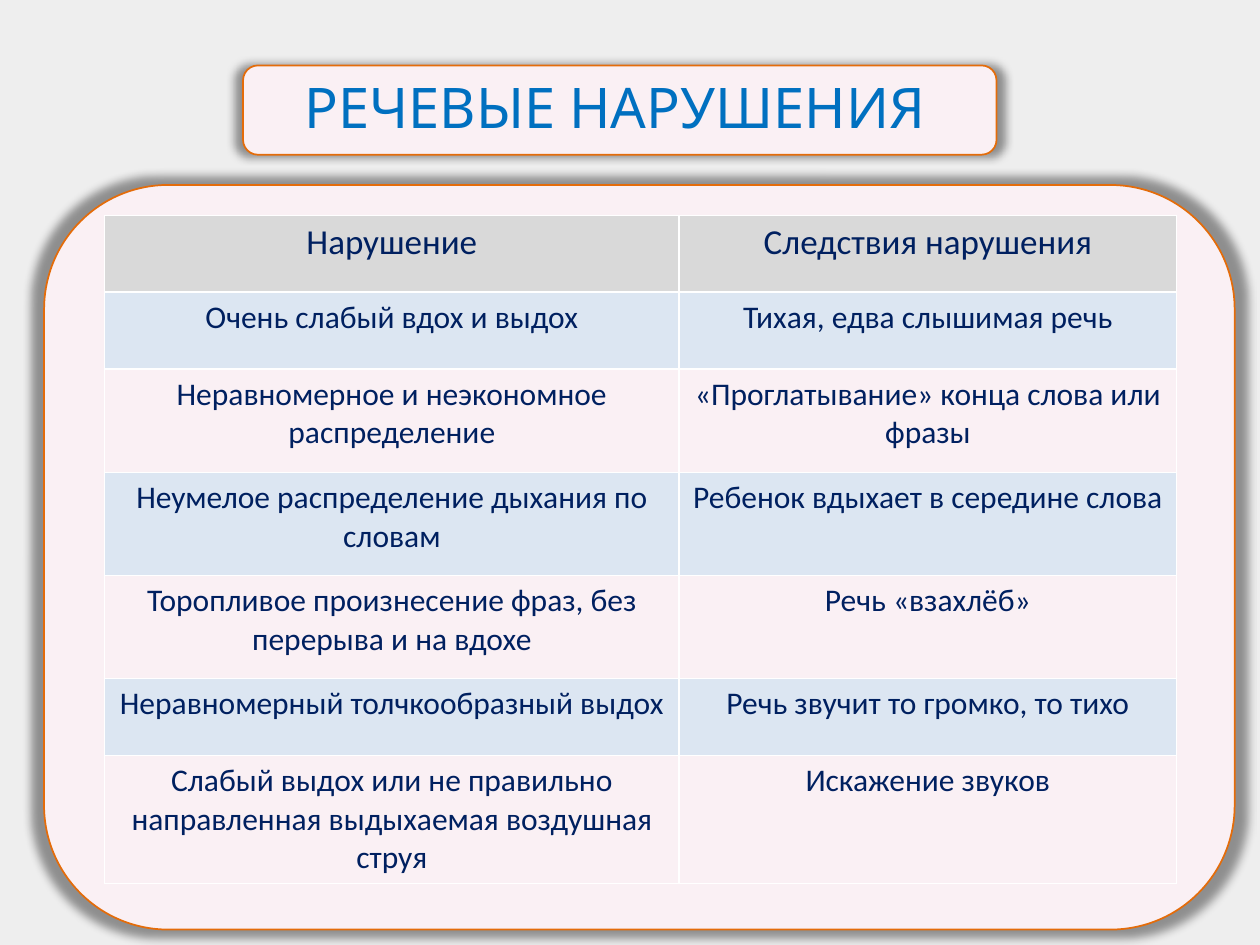
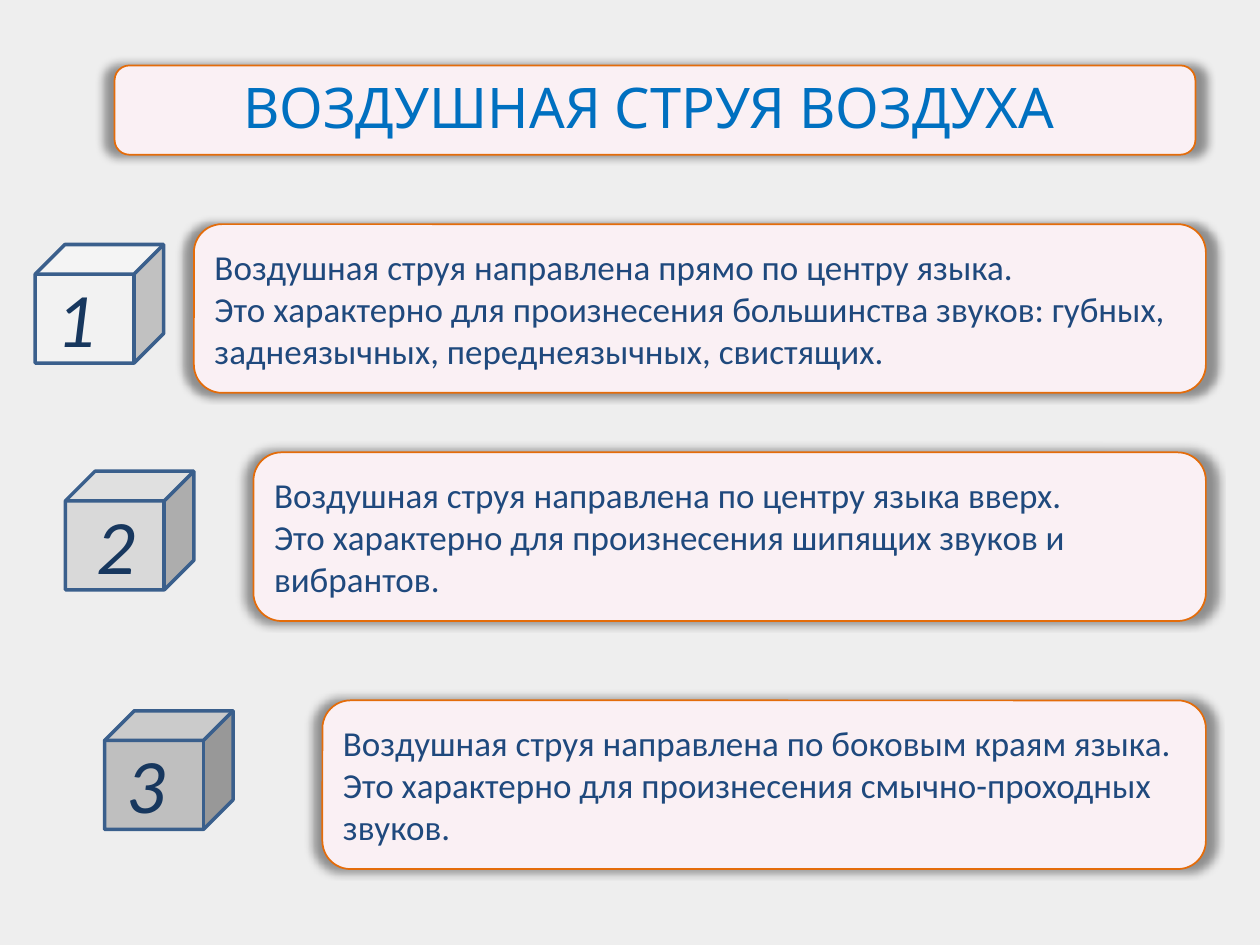
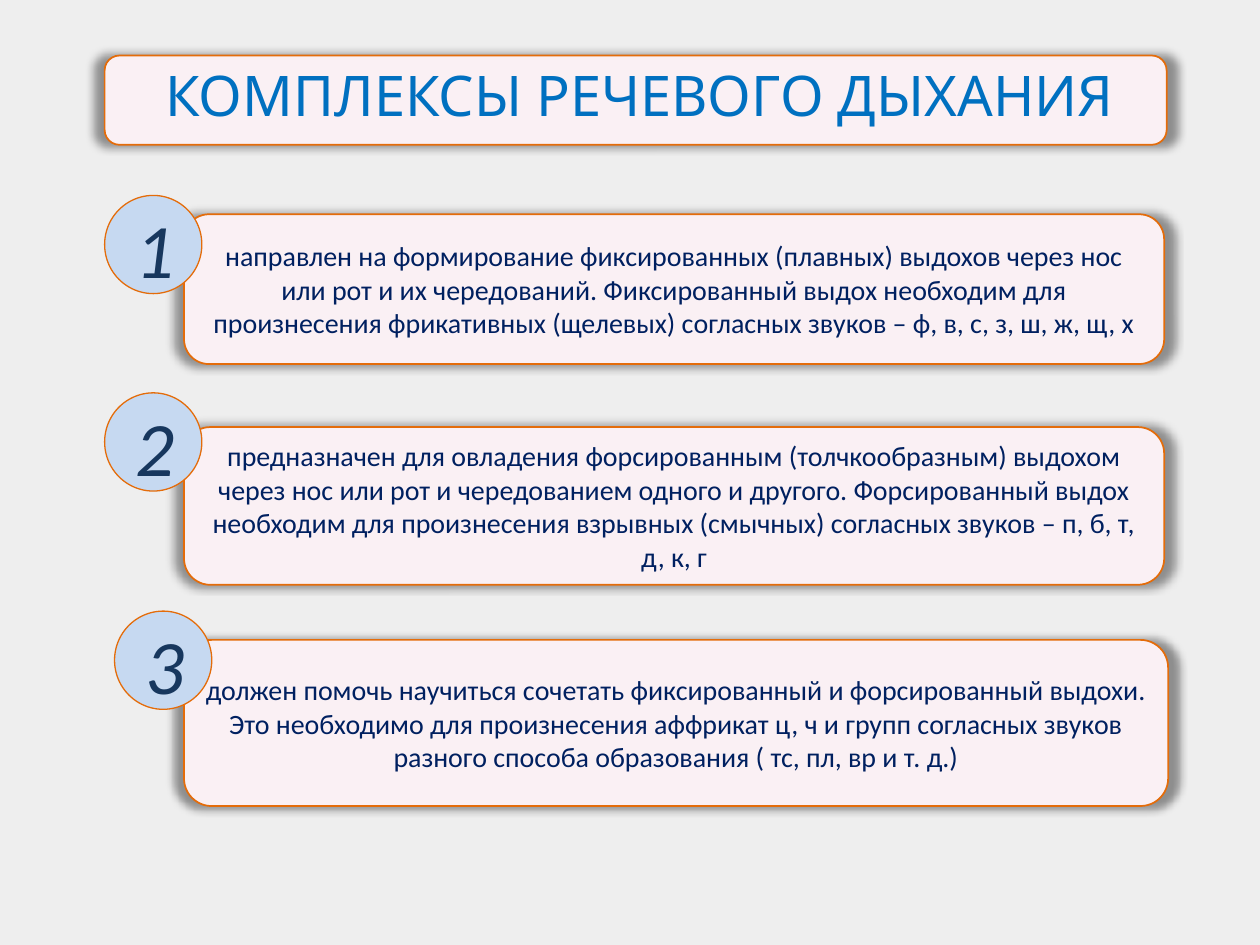
"""Build three slides on speech breathing: disorders, air stream and exercise sets."""
import lxml.etree
import pptx
import pptx.dml.color
import pptx.enum.shapes
import pptx.enum.text
import pptx.oxml
import pptx.oxml.ns
import pptx.util

Cm = pptx.util.Cm
RGBColor = pptx.dml.color.RGBColor
SHAPE = pptx.enum.shapes.MSO_SHAPE
ANCHOR = pptx.enum.text.MSO_ANCHOR
ALIGN = pptx.enum.text.PP_ALIGN

BACKGROUND = RGBColor(0xEE, 0xEE, 0xEE)
PANEL = RGBColor(0xFA, 0xF0, 0xF4)
ORANGE = RGBColor(0xE4, 0x6C, 0x0A)
TITLE_BLUE = RGBColor(0x00, 0x70, 0xC0)
NAVY = RGBColor(0x00, 0x20, 0x60)
BODY_BLUE = RGBColor(0x1F, 0x49, 0x7D)
NUMBER_BLUE = RGBColor(0x17, 0x37, 0x5E)
CUBE_LINE = RGBColor(0x3A, 0x5F, 0x8C)
CUBE_FILLS = [RGBColor(shade, shade, shade) for shade in (0xF2, 0xD9, 0xBF)]
CIRCLE_FILL = RGBColor(0xC6, 0xD9, 0xF1)
HEADER_FILL = RGBColor(0xD9, 0xD9, 0xD9)
BAND_FILL = RGBColor(0xDC, 0xE6, 0xF2)

TITLE_FONT = "League Spartan"
BODY_FONT = "Calibri"

DISORDERS = [
    (1.55, "Нарушение", "Следствия нарушения"),
    (1.55, "Очень слабый вдох и выдох", "Тихая, едва слышимая речь"),
    (2.08, "Неравномерное и неэкономное распределение",
     "«Проглатывание» конца слова или фразы"),
    (2.08, "Неумелое распределение дыхания по словам",
     "Ребенок вдыхает в середине слова"),
    (2.08, "Торопливое произнесение фраз, без перерыва и на вдохе",
     "Речь «взахлёб»"),
    (1.55, "Неравномерный толчкообразный выдох",
     "Речь звучит то громко, то тихо"),
    (2.18, "Слабый выдох или не правильно направленная выдыхаемая воздушная струя",
     "Искажение звуков"),
]

# Each entry: cube place, number place and width, box place, text.
AIR_STREAMS = [
    ((0.71, 4.93), (0.89, 1.4), (3.91, 4.52),
     "Воздушная струя направлена прямо по центру языка.\n"
     "Это характерно для произнесения большинства звуков: губных, "
     "заднеязычных, переднеязычных, свистящих."),
    ((1.32, 9.5), (1.7, 1.6), (5.11, 9.12),
     "Воздушная струя направлена по центру языка вверх.\n"
     "Это характерно для произнесения шипящих звуков и вибрантов."),
    ((2.11, 14.33), (2.31, 2.01), (6.5, 14.12),
     "Воздушная струя направлена по боковым краям языка.\n"
     "Это характерно для произнесения смычно-проходных звуков."),
]
STREAM_RIGHT = 24.31

# Each entry: circle place, box top, width and height, text.
EXERCISE_SETS = [
    ((2.11, 3.94), (4.32, 19.76, 3.02),
     "направлен на формирование фиксированных (плавных) выдохов через нос "
     "или рот и их чередований. Фиксированный выдох необходим для "
     "произнесения фрикативных (щелевых) согласных звуков – ф, в, с, з, ш, ж, щ, х"),
    ((2.11, 7.92), (8.61, 19.76, 3.18),
     "предназначен для овладения форсированным (толчкообразным) выдохом "
     "через нос или рот и чередованием одного и другого. Форсированный выдох "
     "необходим для произнесения взрывных (смычных) согласных звуков – п, б, т, д, к, г"),
    ((2.31, 12.32), (12.9, 19.84, 3.35),
     "должен помочь научиться сочетать фиксированный и форсированный выдохи. "
     "Это необходимо для произнесения аффрикат ц, ч и групп согласных звуков "
     "разного способа образования ( тс, пл, вр и т. д.)"),
]


def write_text(text_frame, text, *, size, color, font=BODY_FONT, italic=False,
               align=ALIGN.LEFT, anchor=None):
    """Fill a text frame, one paragraph per line of text."""
    text_frame.word_wrap = True
    if anchor is not None:
        text_frame.vertical_anchor = anchor
    text_frame.text = text
    for paragraph in text_frame.paragraphs:
        paragraph.alignment = align
        for run in paragraph.runs:
            run.font.name = font
            run.font.size = pptx.util.Pt(size)
            run.font.bold = False
            run.font.italic = italic
            run.font.color.rgb = color


def add_figure(slide, kind, place, fill, line, line_width):
    """Add a filled and outlined preset shape without a shadow."""
    shape = slide.shapes.add_shape(kind, *map(Cm, place))
    shape.shadow.inherit = False
    shape.fill.solid()
    shape.fill.fore_color.rgb = fill
    shape.line.color.rgb = line
    shape.line.width = pptx.util.Pt(line_width)
    return shape


def add_panel(slide, *place):
    """Add a rounded panel with a soft shadow all round."""
    panel = add_figure(slide, SHAPE.ROUNDED_RECTANGLE, place, PANEL, ORANGE, 1)
    effects = panel.element.spPr.find(pptx.oxml.ns.qn("a:effectLst"))
    shadow = lxml.etree.SubElement(
        effects, pptx.oxml.ns.qn("a:outerShdw"), blurRad="63500",
        sx="102000", sy="102000", algn="ctr", rotWithShape="0")
    color = lxml.etree.SubElement(shadow, pptx.oxml.ns.qn("a:prstClr"), val="black")
    lxml.etree.SubElement(color, pptx.oxml.ns.qn("a:alpha"), val="40000")
    return panel


def add_number(slide, number, left, top, width):
    """Add a large italic number."""
    box = slide.shapes.add_textbox(Cm(left), Cm(top), Cm(width), Cm(2.13))
    write_text(box.text_frame, str(number), size=44, color=NUMBER_BLUE, italic=True)


def add_titled_slide(presentation, text, panel_place, title_place):
    """Add a slide whose title stands on a panel."""
    slide = presentation.slides.add_slide(presentation.slide_layouts[5])
    panel = add_panel(slide, *panel_place)
    title = slide.shapes.title
    title.left, title.top, title.width, title.height = map(Cm, title_place)
    title.text_frame.auto_size = pptx.enum.text.MSO_AUTO_SIZE.NONE
    write_text(title.text_frame, text, size=32, color=TITLE_BLUE, font=TITLE_FONT,
               align=ALIGN.CENTER, anchor=ANCHOR.BOTTOM)
    panel.element.addnext(title.element)
    return slide


def add_disorder_table(slide):
    """Add the table of disorders and their consequences."""
    widths = (11.58, 10.03)
    height = sum(row[0] for row in DISORDERS)
    table = slide.shapes.add_table(len(DISORDERS), len(widths), Cm(2.11), Cm(4.34),
                                   Cm(sum(widths)), Cm(height)).table
    for column, width in zip(table.columns, widths):
        column.width = Cm(width)
    for index, (row_height, *texts) in enumerate(DISORDERS):
        table.rows[index].height = Cm(row_height)
        band = BAND_FILL if index % 2 else PANEL
        for column_index, text in enumerate(texts):
            cell = table.cell(index, column_index)
            cell.fill.solid()
            cell.fill.fore_color.rgb = band if index else HEADER_FILL
            write_text(cell.text_frame, text, size=18 if index else 20,
                       color=NAVY, align=ALIGN.CENTER)


def add_air_streams(slide):
    """Add the numbered cubes with their descriptions."""
    for number, (cube, digit, box, text) in enumerate(AIR_STREAMS, start=1):
        add_figure(slide, SHAPE.CUBE, (*cube, 2.59, 2.39),
                   CUBE_FILLS[number - 1], CUBE_LINE, 2)
        panel = add_panel(slide, *box, STREAM_RIGHT - box[0], 3.4)
        write_text(panel.text_frame, text, size=20, color=BODY_BLUE,
                   anchor=ANCHOR.MIDDLE)
        digit_left, digit_width = digit
        add_number(slide, number, digit_left, cube[1] + 0.4, digit_width)


def add_exercise_sets(slide):
    """Add the numbered circles with their descriptions."""
    for number, (circle, box, text) in enumerate(EXERCISE_SETS, start=1):
        panel = add_panel(slide, 3.71, *box)
        write_text(panel.text_frame, text, size=16, color=NAVY,
                   align=ALIGN.CENTER, anchor=ANCHOR.MIDDLE)
        add_figure(slide, SHAPE.OVAL, (*circle, 1.96, 1.98), CIRCLE_FILL, ORANGE, 0.75)
        add_number(slide, number, circle[0] + 0.38, circle[1], 1.19)


def main():
    """Build and save the presentation."""
    presentation = pptx.Presentation()
    presentation.slide_width, presentation.slide_height = Cm(25.4), Cm(19.05)
    background = presentation.slide_master.background.fill
    background.solid()
    background.fore_color.rgb = BACKGROUND

    disorders = add_titled_slide(presentation, "РЕЧЕВЫЕ НАРУШЕНИЯ",
                                 (4.9, 1.32, 15.19, 1.8), (4.9, 0.74, 15.01, 2.21))
    add_panel(disorders, 0.89, 3.73, 24, 15.01)
    add_disorder_table(disorders)

    streams = add_titled_slide(presentation, "ВОЗДУШНАЯ СТРУЯ ВОЗДУХА",
                               (2.31, 1.32, 21.79, 1.8), (1.09, 0.74, 24, 2.21))
    add_air_streams(streams)

    exercises = add_titled_slide(presentation, "КОМПЛЕКСЫ РЕЧЕВОГО ДЫХАНИЯ",
                                 (2.11, 1.12, 21.41, 1.8), (2.9, 1.52, 19.99, 1.19))
    add_exercise_sets(exercises)

    presentation.save("out.pptx")


if __name__ == "__main__":
    main()
